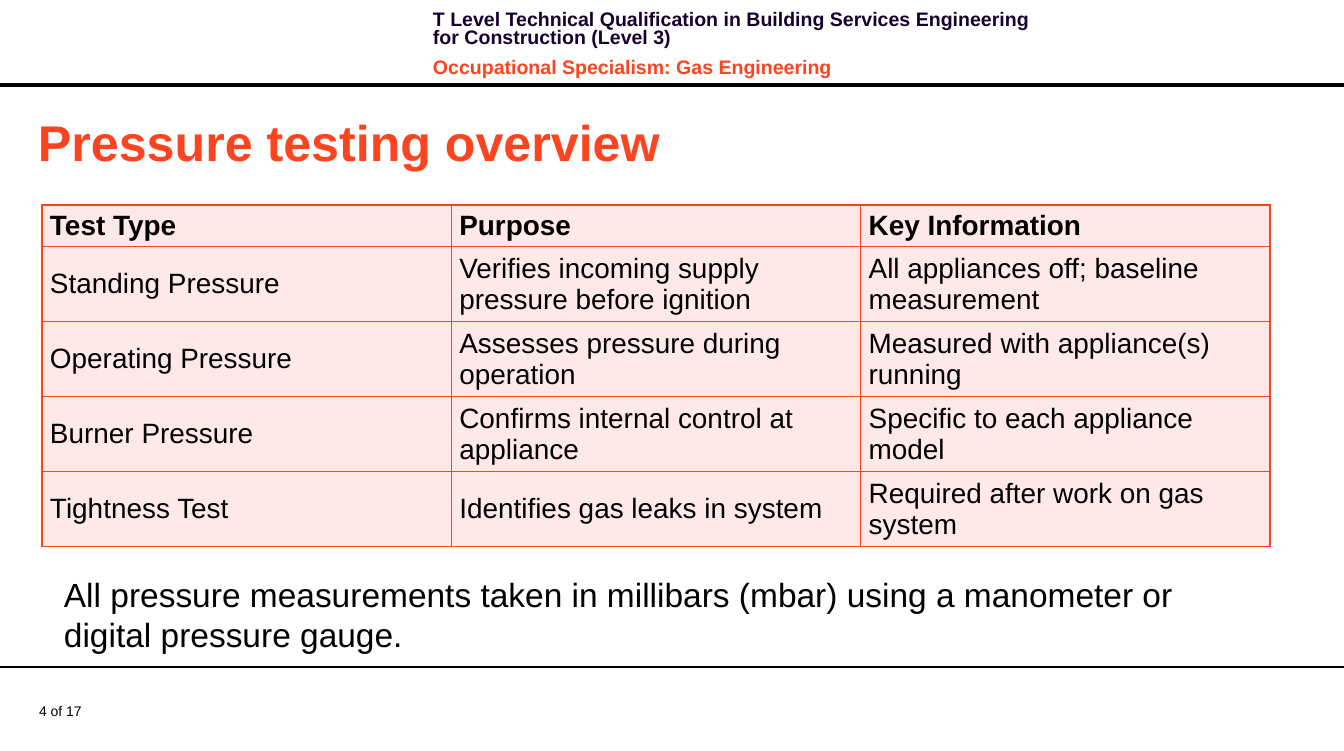
from dataclasses import dataclass

from lxml import etree
from pptx import Presentation
from pptx import util as u
from pptx.dml.color import RGBColor
from pptx.enum import shapes, text
from pptx.oxml import ns

SCALE = 9108
WIDE, HIGH = 1344, 751


@dataclass(frozen=True)
class Theme:
    face: str = "Arial"
    black: str = "000000"
    navy: str = "170130"
    red: str = "FC4421"
    pink: str = "FEE9E8"
    title: int = 36
    body: int = 24
    table: int = 20
    head: int = 14
    page: int = 10


def px(*sizes):
    return [u.Emu(size * SCALE) for size in sizes]


class Deck:
    def __init__(self, theme):
        self.theme = theme
        self.show = Presentation()
        self.show.slide_width, self.show.slide_height = px(WIDE, HIGH)
        self.slide = self.show.slides.add_slide(self.show.slide_layouts[6])

    def style(self, para, size, color, bold=False):
        font = para.font
        font.name = self.theme.face
        font.size = u.Pt(size)
        font.bold = bold
        font.color.rgb = RGBColor.from_string(color)

    def text(self, box, items, size, bold=False, middle=False, inset=(10, 5), lead=None, gap=0):
        frame = self.slide.shapes.add_textbox(*px(*box)).text_frame
        frame.word_wrap = True
        frame.margin_left, frame.margin_top = px(*inset)
        frame.margin_right, frame.margin_bottom = px(*inset)
        if middle:
            frame.vertical_anchor = text.MSO_ANCHOR.MIDDLE
        for index, (words, color) in enumerate(items):
            para = frame.add_paragraph() if index else frame.paragraphs[0]
            para.text = words
            self.style(para, size, color, bold)
            para.space_before = u.Pt(gap if index else 0)
            para.space_after = u.Pt(gap)
            if lead:
                para.line_spacing = u.Pt(lead)

    def bar(self, box, color):
        bar = self.slide.shapes.add_shape(shapes.MSO_SHAPE.RECTANGLE, *px(*box))
        bar.shadow.inherit = False
        bar.fill.solid()
        bar.fill.fore_color.rgb = RGBColor.from_string(color)
        bar.line.fill.background()

    def rule(self, y, color, width):
        line = self.slide.shapes.add_connector(shapes.MSO_CONNECTOR.STRAIGHT, *px(0, y, WIDE, y))
        line.line.color.rgb = RGBColor.from_string(color)
        line.line.width = u.Pt(width)
        etree.SubElement(line.element.spPr, ns.qn("a:effectLst"))

    def border(self, cell, color, width):
        props = cell._tc.get_or_add_tcPr()
        for index, side in enumerate(("lnL", "lnR", "lnT", "lnB")):
            line = etree.Element(ns.qn(f"a:{side}"), w=str(u.Pt(width)))
            fill = etree.SubElement(line, ns.qn("a:solidFill"))
            etree.SubElement(fill, ns.qn("a:srgbClr"), val=color)
            props.insert(index, line)

    def table(self, box, rows, heights):
        theme = self.theme
        table = self.slide.shapes.add_table(len(rows), len(rows[0]), *px(*box)).table
        table.first_row = table.horz_banding = False
        for r, words in enumerate(rows):
            table.rows[r].height = px(heights[r])[0]
            for c, word in enumerate(words):
                cell = table.cell(r, c)
                cell.text = word
                cell.vertical_anchor = text.MSO_ANCHOR.MIDDLE
                cell.margin_left, cell.margin_right = px(8, 8)
                cell.margin_top, cell.margin_bottom = px(4, 4)
                cell.fill.solid()
                cell.fill.fore_color.rgb = RGBColor.from_string(theme.pink)
                self.border(cell, theme.red, 1)
                self.style(cell.text_frame.paragraphs[0], theme.table, theme.black, r == 0)


TESTS = [
    ("Test Type", "Purpose", "Key Information"),
    ("Standing Pressure", "Verifies incoming supply pressure before ignition",
     "All appliances off; baseline measurement"),
    ("Operating Pressure", "Assesses pressure during operation",
     "Measured with appliance(s) running"),
    ("Burner Pressure", "Confirms internal control at appliance",
     "Specific to each appliance model"),
    ("Tightness Test", "Identifies gas leaks in system",
     "Required after work on gas system"),
]
COURSE = "T Level Technical Qualification in Building Services Engineering for Construction (Level 3)"
NOTE = ("All pressure measurements taken in millibars (mbar) using a manometer "
        "or digital pressure gauge.")


def main():
    theme = Theme()
    deck = Deck(theme)
    deck.bar((0, 83, WIDE, 4), theme.black)
    deck.text((39, 702, 64, 17), [("4 of 17", theme.black)], theme.page,
              middle=True, inset=(0, 0))
    deck.rule(667, theme.black, 0.75)
    deck.text((423, 7, 640, 64),
              [(COURSE, theme.navy), ("Occupational Specialism: Gas Engineering", theme.red)],
              theme.head, bold=True, lead=13.1, gap=4)
    deck.text((28, 106, 1277, 71), [("Pressure testing overview", theme.red)],
              theme.title, bold=True, middle=True)
    deck.table((42, 205, 1228, 319), TESTS, [39] + [70] * 4)
    deck.text((54, 569, 1194, 91), [(NOTE, theme.black)], theme.body)
    deck.show.save("out.pptx")


if __name__ == "__main__":
    main()
